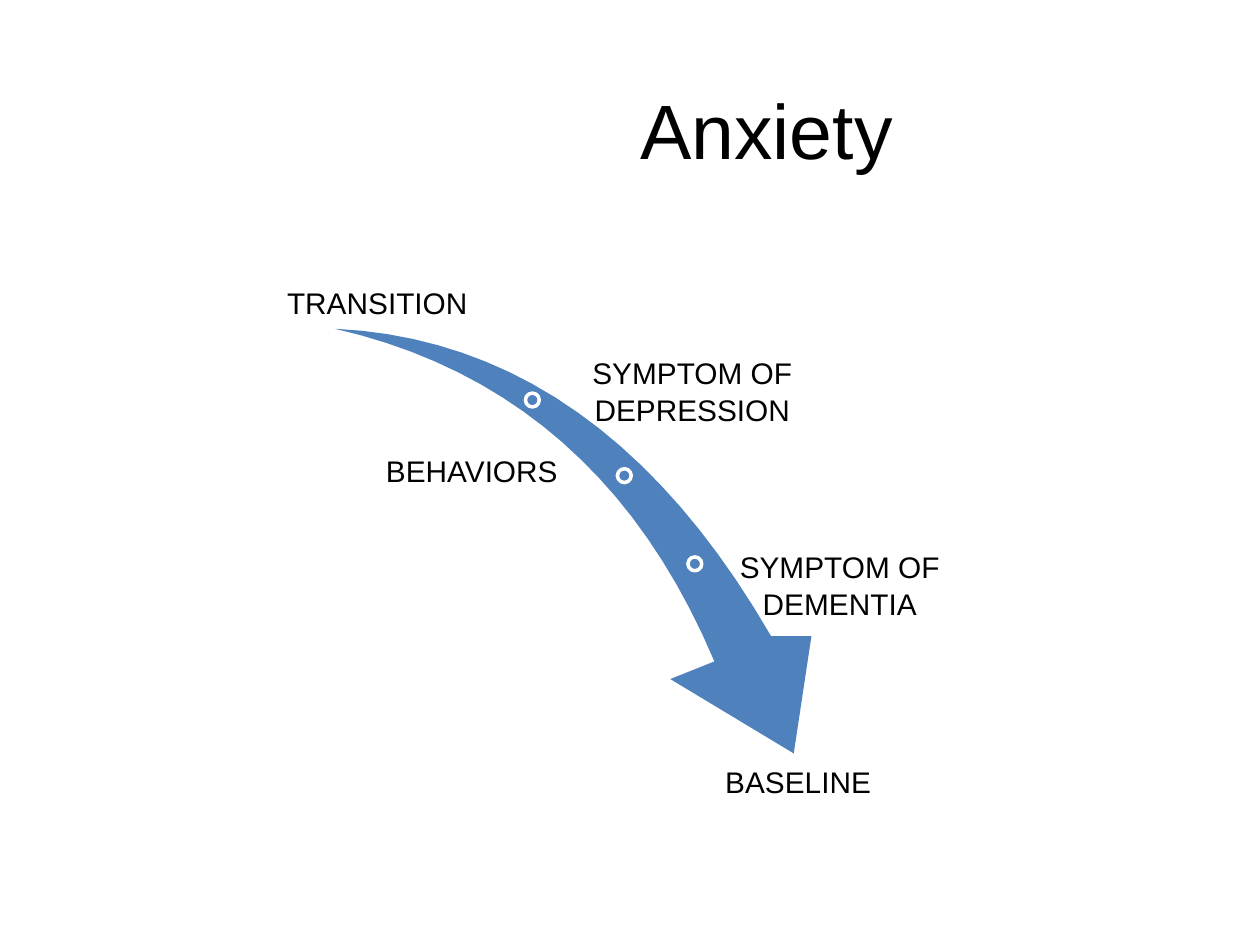
from pptx import Presentation
from pptx.dml.color import RGBColor
from pptx.enum import shapes, text
from pptx.util import Inches, Pt

FONT = "Arial"
BLACK = RGBColor(0x00, 0x00, 0x00)
WHITE = RGBColor(0xFF, 0xFF, 0xFF)
BLUE = RGBColor(0x4F, 0x81, 0xBD)

CURVE_STEPS = 20
RING_SIZE = 0.11
LABEL_WIDTH = 1.83

# Arrow geometry as fractions of inches from the arrow's top left corner
TAIL = (0, 0)
LOWER_BEND, LOWER_END = (2.1, 0.48), (3.01, 2.64)
UPPER_BEND, UPPER_END = (2.11, 0.1), (3.46, 2.44)
HEAD = [(2.66, 2.78), (3.64, 3.37), (3.78, 2.44)]
RINGS = [(1.51, 0.51), (2.24, 1.11), (2.8, 1.81)]

# Label text, left, top and height
LABELS = [
    ("TRANSITION", 2.08, 2.2, 0.39),
    ("BEHAVIORS", 2.83, 3.53, 0.39),
    ("BASELINE", 5.42, 6, 0.39),
    ("SYMPTOM OF DEPRESSION", 4.58, 2.75, 0.67),
    ("SYMPTOM OF DEMENTIA", 5.75, 4.29, 0.67),
]


def write_centred(frame, words, size):
    frame.word_wrap = True
    para = frame.paragraphs[0]
    para.alignment = text.PP_ALIGN.CENTER
    span = para.add_run()
    span.text = words
    span.font.name = FONT
    span.font.size = Pt(size)
    span.font.color.rgb = BLACK
    return para


def add_title(page, left, top, width, height):
    title = page.shapes.title
    title.left, title.top = Inches(left), Inches(top)
    title.width, title.height = Inches(width), Inches(height)
    title.text_frame.vertical_anchor = text.MSO_ANCHOR.MIDDLE
    write_centred(title.text_frame, "Anxiety", 44)


def curve(start, bend, end):
    """Points of a quadratic curve from start to end."""
    points = []
    for step in range(CURVE_STEPS + 1):
        t = step / CURVE_STEPS
        points.append(tuple(
            (1 - t) ** 2 * a + 2 * t * (1 - t) * b + t ** 2 * c
            for a, b, c in zip(start, bend, end)))
    return points


def add_arrow(page, left, top):
    # Tapering body and arrowhead
    outline = (curve(TAIL, LOWER_BEND, LOWER_END) + HEAD
               + curve(UPPER_END, UPPER_BEND, TAIL))
    points = [(Inches(left + x), Inches(top + y)) for x, y in outline]
    builder = page.shapes.build_freeform(*points[0])
    builder.add_line_segments(points[1:], close=True)
    arrow = builder.convert_to_shape()
    arrow.shadow.inherit = False
    arrow.fill.solid()
    arrow.fill.fore_color.rgb = BLUE
    arrow.line.fill.background()

    # Stage rings along the body
    for x, y in RINGS:
        ring = page.shapes.add_shape(
            shapes.MSO_SHAPE.OVAL, Inches(left + x), Inches(top + y),
            Inches(RING_SIZE), Inches(RING_SIZE))
        ring.shadow.inherit = False
        ring.fill.background()
        ring.line.color.rgb = WHITE
        ring.line.width = Pt(2)


def add_label(page, words, left, top, height):
    box = page.shapes.add_textbox(
        Inches(left), Inches(top), Inches(LABEL_WIDTH), Inches(height))
    para = write_centred(box.text_frame, words, 17)
    para.line_spacing = 1.05
    box.text_frame.auto_size = text.MSO_AUTO_SIZE.SHAPE_TO_FIT_TEXT


def main():
    deck = Presentation()
    deck.slide_width, deck.slide_height = Inches(10), Inches(7.5)
    page = deck.slides.add_slide(deck.slide_layouts.get_by_name("Title Only"))
    add_title(page, 2.67, 0.3, 6.83, 1.45)
    add_arrow(page, 2.66, 2.61)
    for label in LABELS:
        add_label(page, *label)
    deck.save("out.pptx")


if __name__ == "__main__":
    main()
